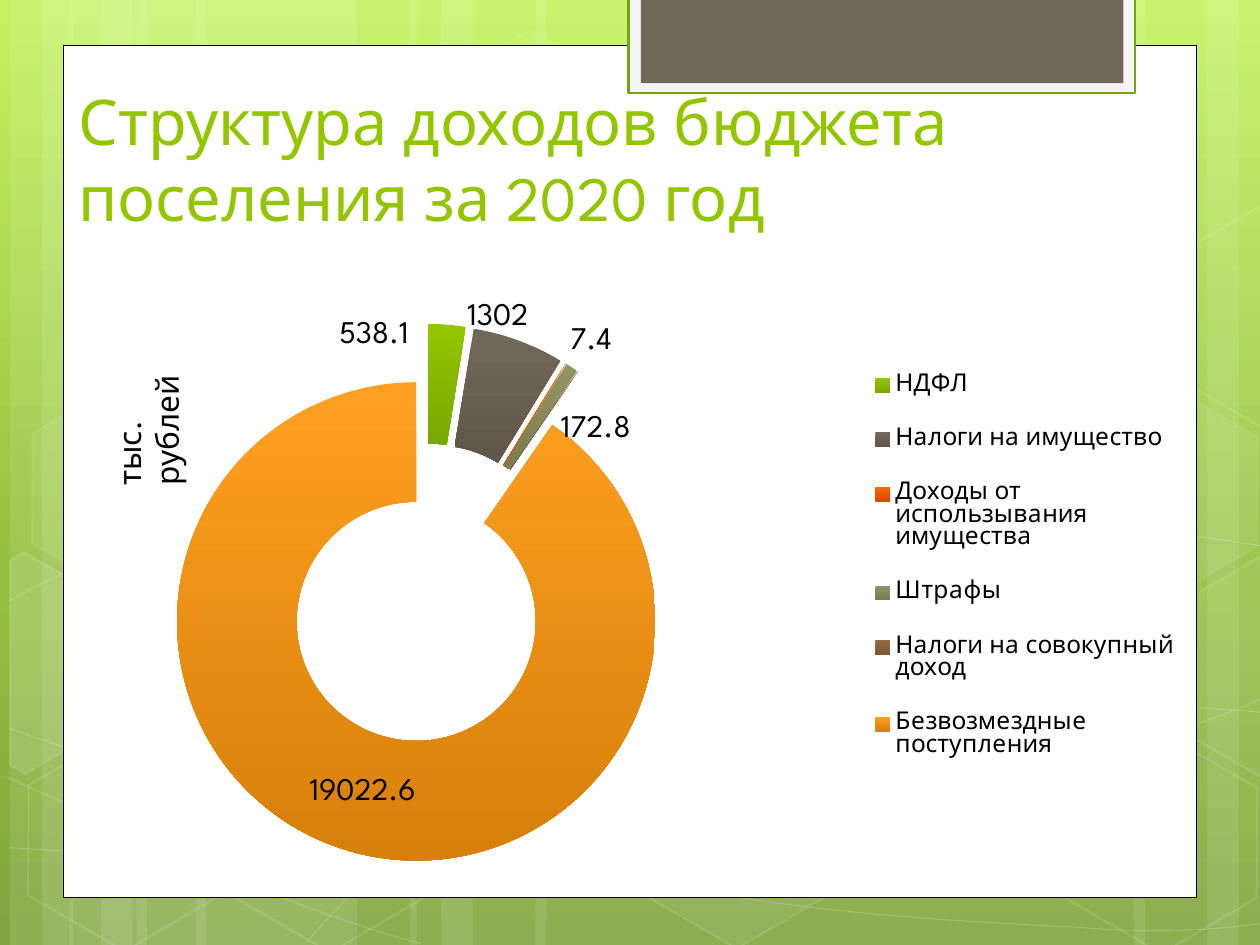
import pptx
import pptx.chart.data
import pptx.dml.color
import pptx.enum.chart
import pptx.enum.shapes
import pptx.enum.text
import pptx.oxml
import pptx.oxml.ns
import pptx.util
import copy
import math

Cm, Pt, qn = pptx.util.Cm, pptx.util.Pt, pptx.oxml.ns.qn
SHAPES = pptx.enum.shapes.MSO_SHAPE
FONT = "League Spartan"
TILT = 30
COLORS = {"white": "FFFFFF", "black": "000000", "title": "94C600", "tab": "71685A",
          "tab frame": "F5F5F5", "tab line": "74A510"}
BACKGROUND = [(0, "C3F35F"), (62, "93BF3F"), (100, "81A53E")]
INCOME = [  # category, thousand roubles, colour, label shift (None hides the label)
    ("НДФЛ", 538.1, "94C600", (-0.06, -0.08)),
    ("Налоги на имущество", 1302, "71685A", (0, -0.13)),
    ("Доходы от использывания имущества", 7.4, "FF6700", (0.05, -0.12)),
    ("Штрафы", 172.8, "909465", (0.05, 0.02)),
    ("Налоги на совокупный доход", 7.4, "956B43", None),
    ("Безвозмездные поступления", 19022.6, "FEA022", (0, 0)),
]
STRIPES = [(2.75, 4.45), (0.2, 1.27), (0.85, 2.12), (3.95, 4.45), (1.4, 1.27), (2.03, 2.12),
           (18.63, 4.45), (24.34, 1.27), (22.86, 2.12), (10.8, 7.83), (8.26, 1.27), (8.89, 2.12)]
HEXAGONS = [  # left, top, fill opacity, line opacity
    (8.48, 0.91, 4, 8), (12.62, 14.96, 6, 12), (0.28, 15.01, 0, 12), (0.36, 7.92, 7, 8),
    (4.42, 15.04, 0, 12), (19.13, 11.51, 10, 12), (21.18, 15.06, 0, 12), (21.18, 7.98, 7, 8)]
LEFT_CUT = [(0.2, 11.3), (0.48, 11.13), (2.44, 12.24), (2.41, 14.48), (0.51, 15.6), (0.2, 15.42)]
RIGHT_CUT = [(23.52, 12.32), (25.43, 11.2), (25.63, 11.33),
             (25.63, 15.57), (25.45, 15.67), (23.52, 14.55)]
WAVES = [  # Bezier points: a start, then threes of two controls and an end
    [(0.18, 17.09), (1.55, 17.17), (2.92, 17.25), (4.83, 17.22), (6.73, 17.2), (9.09, 17.15),
     (11.63, 16.89), (14.17, 16.64), (17.78, 16.15), (20.12, 15.67), (22.43, 15.19),
     (24.82, 14.43), (25.58, 14)],
    [(0.18, 12.12), (0.91, 11.71), (1.65, 11.33), (3.07, 10.95), (4.52, 10.57), (6.58, 10.01),
     (8.81, 9.83), (11.07, 9.65), (13.82, 9.63), (16.61, 9.83), (19.41, 10.03),
     (24.05, 10.82), (25.58, 11.02)],
    [(0.15, 15.67), (3.23, 17.07), (6.27, 18.47), (8.48, 19.02)],
    [(0.18, 14.68), (0.97, 14.96), (1.78, 15.24), (3.25, 15.65), (4.72, 16.03), (6.93, 16.66),
     (9.07, 17.09), (11.18, 17.53), (13.84, 17.98), (15.95, 18.24), (18.06, 18.52),
     (20.32, 18.62), (21.67, 18.69), (22.99, 18.8), (23.34, 18.75), (24, 18.75),
     (24.66, 18.72), (25.12, 18.64), (25.58, 18.62)],
    [(6.15, 19.02), (6.6, 18.52), (7.06, 18.01), (7.67, 17.55), (8.28, 17.09), (9.14, 16.59),
     (9.86, 16.23), (10.57, 15.88), (11, 15.72), (11.94, 15.47), (12.85, 15.21),
     (14.55, 14.86), (15.44, 14.68), (16.36, 14.5), (16.48, 14.5), (17.27, 14.45),
     (18.06, 14.38), (19.3, 14.3), (20.17, 14.27), (21.06, 14.25), (22.5, 14.27),
     (22.5, 14.27), (22.5, 14.27), (24.21, 14.27), (24.21, 14.27),
     (24.66, 14.3), (25.1, 14.33), (25.32, 14.35), (25.55, 14.38), (25.48, 14.35),
     (25.55, 14.38)],
]


def rgb(hex_color):
    return pptx.dml.color.RGBColor.from_string(hex_color)


def chart_xml(text):
    return pptx.oxml.parse_xml(text.replace(" ", f" {pptx.oxml.ns.nsdecls('c')} ", 1))


def paint(fill, color, opacity=100):
    """Fill with a solid colour; an opacity of 0 leaves no fill."""
    if not opacity:
        fill.background()
        return
    fill.solid()
    fill.fore_color.rgb = rgb(COLORS[color])
    if opacity < 100:
        srgb = fill._xPr.find(".//" + qn("a:srgbClr"))
        srgb.append(pptx.oxml.parse_xml(
            f'<a:alpha {pptx.oxml.ns.nsdecls("a")} val="{opacity * 1000}"/>'))


def style(shape, fill=("white", 0), line=("white", 0), width=1):
    shape.shadow.inherit = False
    paint(shape.fill, *fill)
    shape.line.width = Pt(width)
    paint(shape.line.fill, *line)


def add_block(slide, preset, box, **look):
    block = slide.shapes.add_shape(preset, *map(Cm, box))
    style(block, **look)
    return block


def add_outline(slide, points, closed, **look):
    points = [(Cm(x), Cm(y)) for x, y in points]
    builder = slide.shapes.build_freeform(*points[0])
    builder.add_line_segments(points[1:], close=closed)
    outline = builder.convert_to_shape()
    style(outline, **look)
    return outline


def add_wave(slide, controls):
    """Draw a chain of Bezier curves by joining each three line steps into one curve."""
    wave = add_outline(slide, controls, False, line=("white", 20), width=0.5)
    steps = wave._element.findall(".//" + qn("a:lnTo"))
    for i in range(0, len(steps), 3):
        curve = pptx.oxml.parse_xml(f'<a:cubicBezTo {pptx.oxml.ns.nsdecls("a")}/>')
        steps[i].addprevious(curve)
        for step in steps[i:i + 3]:
            curve.append(step[0])
            step.getparent().remove(step)


def add_cut_hexagon(slide, points, center, opacity):
    """Draw a hexagon cut by the slide edge, turned like the whole ones."""
    cos, sin = math.cos(math.radians(TILT)), math.sin(math.radians(TILT))
    offsets = [(x - center[0], y - center[1]) for x, y in points]
    upright = [(center[0] + x * cos + y * sin, center[1] - x * sin + y * cos) for x, y in offsets]
    add_outline(slide, upright, True, fill=("white", opacity), line=("white", 12)).rotation = TILT


def add_text(slide, box, text, size, color, anchor, rotation=0):
    label = slide.shapes.add_textbox(*map(Cm, box))
    label.rotation = rotation
    frame = label.text_frame
    for name, value in {"word_wrap": True, "vertical_anchor": anchor, "text": text}.items():
        setattr(frame, name, value)
    font = frame.paragraphs[0].runs[0].font
    for name, value in {"name": FONT, "size": Pt(size)}.items():
        setattr(font, name, value)
    font.color.rgb = rgb(COLORS[color])


def set_background(slide):
    fill = slide.background.fill
    fill.gradient()
    fill.gradient_angle = 270
    stops = fill._xPr.find(".//" + qn("a:gsLst"))
    stops.insert(1, copy.deepcopy(stops[0]))
    for stop, (position, color) in zip(fill.gradient_stops, BACKGROUND):
        stop.position = position / 100
        stop.color.rgb = rgb(color)


def add_decor(slide):
    for left, width in STRIPES:
        add_block(slide, SHAPES.RECTANGLE, (left, 0, width, 19.05), fill=("white", 10))
    for wave in WAVES:
        add_wave(slide, wave)
    for left, top, fill, line in HEXAGONS:
        hexagon = add_block(slide, SHAPES.HEXAGON, (left, top, 4.45, 3.86),
                            fill=("white", fill), line=("white", line))
        hexagon.adjustments[0] = 0.285
        hexagon.rotation = TILT
    upper_cut = [(x, y - 7.06) for x, y in RIGHT_CUT]
    add_cut_hexagon(slide, LEFT_CUT, (0.91, 13.59), 10)
    add_cut_hexagon(slide, RIGHT_CUT, (25.02, 13.21), 4)
    add_cut_hexagon(slide, upper_cut, (25.02, 6.15), 0)


def layout_xml(x, y, width=None, height=None, inner=False):
    target = '<c:layoutTarget val="inner"/>' if inner else ""
    modes = '<c:xMode val="edge"/><c:yMode val="edge"/>' if width else ""
    size = f'<c:w val="{width}"/><c:h val="{height}"/>' if width else ""
    return (f'<c:layout ><c:manualLayout>{target}{modes}<c:x val="{x}"/><c:y val="{y}"/>'
            f'{size}</c:manualLayout></c:layout>')


def shade(color):
    """A darker, slightly more saturated tone."""
    parts = [int(color[i:i + 2], 16) * 0.85 for i in (0, 2, 4)]
    return "".join(f"{max(0, int(1.1 * part - 0.1 * max(parts))):02X}" for part in parts)


def style_slice(point, color):
    fill = point.format.fill
    fill.gradient()
    fill.gradient_angle = 270
    for stop, stop_color in zip(fill.gradient_stops, (color, shade(color))):
        stop.color.rgb = rgb(stop_color)
    point.format.line.fill.background()


def label_xml(index, shift):
    if shift is None:
        return f'<c:dLbl ><c:idx val="{index}"/><c:delete val="1"/></c:dLbl>'
    shown = "".join(f'<c:show{part} val="{int(part == "Val")}"/>' for part in
                    ("LegendKey", "Val", "CatName", "SerName", "Percent", "BubbleSize"))
    return f'<c:dLbl ><c:idx val="{index}"/>{layout_xml(*shift)}{shown}</c:dLbl>'


def add_income_chart(slide):
    data = pptx.chart.data.CategoryChartData()
    data.categories = [row[0] for row in INCOME]
    data.add_series("Series 1", [row[1] for row in INCOME])
    chart = slide.shapes.add_chart(pptx.enum.chart.XL_CHART_TYPE.DOUGHNUT,
                                   *map(Cm, (1.5, 5.92, 22.81, 12.19)), data).chart
    for name, value in {"has_title": False, "has_legend": True}.items():
        setattr(chart, name, value)
    for font, size in ((chart.font, 18), (chart.legend.font, 14)):
        font.name, font.size = FONT, Pt(size)
        font.color.rgb = rgb(COLORS["black"])
    chart.legend.position = pptx.enum.chart.XL_LEGEND_POSITION.RIGHT
    chart.legend.include_in_layout = False

    series = chart.plots[0].series[0]
    series.data_labels.show_value = True
    labels = series.data_labels._element
    for index, (_, _, color, shift) in enumerate(INCOME):
        style_slice(series.points[index], color)
        labels.insert(index, chart_xml(label_xml(index, shift)))
    series._element.find(qn("c:dPt")).addprevious(chart_xml('<c:explosion val="25"/>'))

    plot_area = chart._chartSpace.find(".//" + qn("c:plotArea"))
    legend = chart.legend._element
    for part in (plot_area, legend):
        for old in part.findall(qn("c:layout")):
            part.remove(old)
    plot_area.insert(0, chart_xml(layout_xml(0.03, 0.05, 0.56, 0.89, inner=True)))
    plot_area.find(".//" + qn("c:holeSize")).set("val", "50")
    legend.find(qn("c:legendPos")).addnext(chart_xml(layout_xml(0.69, 0.08, 0.3, 0.74)))


def main():
    deck = pptx.Presentation()
    deck.slide_width, deck.slide_height = Cm(25.4), Cm(19.05)
    slide = deck.slides.add_slide(deck.slide_layouts[6])
    set_background(slide)
    add_decor(slide)
    add_block(slide, SHAPES.RECTANGLE, (1.27, 0.91, 22.86, 17.19),
              fill=("white",), line=("black",), width=0.5)
    add_block(slide, SHAPES.RECTANGLE, (12.67, -0.05, 10.21, 1.93),
              fill=("tab frame",), line=("tab line",), width=1.25)
    add_block(slide, SHAPES.RECTANGLE, (12.92, -0.05, 9.73, 1.73), fill=("tab",))
    anchors = pptx.enum.text.MSO_ANCHOR
    add_text(slide, (1.33, 3.32, 24, 1.52), "Структура доходов бюджета поселения за 2020 год",
             36, "title", anchors.BOTTOM)
    add_income_chart(slide)
    add_text(slide, (0.74, 7.67, 3.71, 1.02), "тыс. рублей", 18, "black", anchors.TOP, 270)
    deck.save("out.pptx")


if __name__ == "__main__":
    main()
